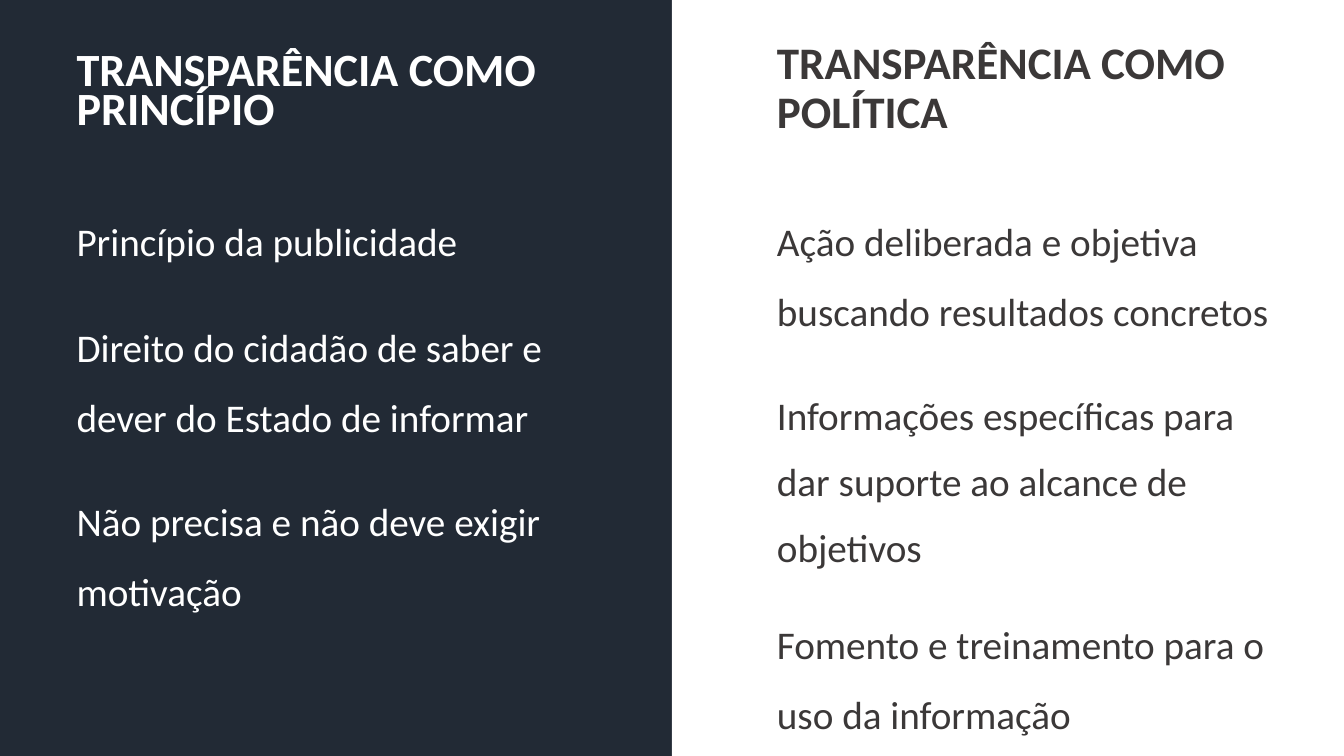
from lxml import etree
from pptx import Presentation
from pptx.dml.color import RGBColor
from pptx.enum import shapes, text
from pptx.oxml.ns import qn
from pptx.util import Cm, Pt

NAVY = RGBColor(0x22, 0x2A, 0x35)
WHITE = RGBColor(0xFF, 0xFF, 0xFF)
GRAY = RGBColor(0x3B, 0x38, 0x38)
FONT = "Calibri"
WIDE, HIGH = 33.87, 19.05
HALF = WIDE / 2
TOP, MID, LOW = (text.MSO_ANCHOR.TOP, text.MSO_ANCHOR.MIDDLE,
                 text.MSO_ANCHOR.BOTTOM)

# Head: words, top, width, height, line spacing, size, anchor
# Items: words, top, height, line spacing
COLUMNS = [
    {"left": 1.68, "width": 13.94, "ink": WHITE,
     "head": ("TRANSPARÊNCIA COMO PRINCÍPIO", 1.17, 12.88, 2.41, 0.7, 33, MID),
     "items": [
         ("Princípio da publicidade", 4.75, 2.29, 1.5),
         ("Direito do cidadão de saber e dever do Estado de informar",
          7.42, 4.42, 1.5),
         ("Não precisa e não deve exigir motivação", 11.81, 4.42, 1.5)]},
    {"left": 19.33, "width": 13.28, "ink": GRAY,
     "head": ("TRANSPARÊNCIA COMO POLÍTICA", 0.69, 12.88, 2.92, 0.9, 32.2, LOW),
     "items": [
         ("Ação deliberada e objetiva buscando resultados concretos",
          4.75, 4.11, 1.5),
         ("Informações específicas para dar suporte ao alcance de objetivos",
          9.27, 5.23, 1.4),
         ("Fomento e treinamento para o uso da informação",
          14.91, 3.66, 1.5)]},
]


def add_panel(slide, left, color):
    panel = slide.shapes.add_shape(shapes.MSO_SHAPE.RECTANGLE, Cm(left), 0,
                                   Cm(HALF), Cm(HIGH))
    panel.shadow.inherit = False
    panel.fill.solid()
    panel.fill.fore_color.rgb = color
    panel.line.fill.background()
    return panel


def add_words(slide, words, box, lead, size, ink, anchor=TOP, bold=False):
    frame = slide.shapes.add_textbox(*map(Cm, box)).text_frame
    frame.word_wrap = True
    frame.vertical_anchor = anchor
    frame.text = words
    para = frame.paragraphs[0]
    para.line_spacing = lead
    font = para.runs[0].font
    font.name, font.size, font.bold = FONT, Pt(size), bold
    font.color.rgb = ink


def main():
    deck = Presentation()
    deck.slide_width, deck.slide_height = Cm(WIDE), Cm(HIGH)
    slide = deck.slides.add_slide(deck.slide_layouts[6])
    slide.background.fill.solid()
    slide.background.fill.fore_color.rgb = NAVY

    right = add_panel(slide, HALF, WHITE)
    right.line.color.rgb = WHITE
    right.line.width = Pt(1)
    left = add_panel(slide, 0, NAVY)
    tint = left.fill._xPr.find(qn("a:solidFill"))[0]
    etree.SubElement(tint, qn("a:alpha"), val="90000")

    for col in COLUMNS:
        x, ink = col["left"], col["ink"]
        words, top, width, height, lead, size, anchor = col["head"]
        add_words(slide, words, (x, top, width, height), lead, size, ink,
                  anchor, True)
        for words, top, height, lead in col["items"]:
            add_words(slide, words, (x, top, col["width"], height), lead, 28,
                      ink)
    deck.save("out.pptx")


if __name__ == "__main__":
    main()
